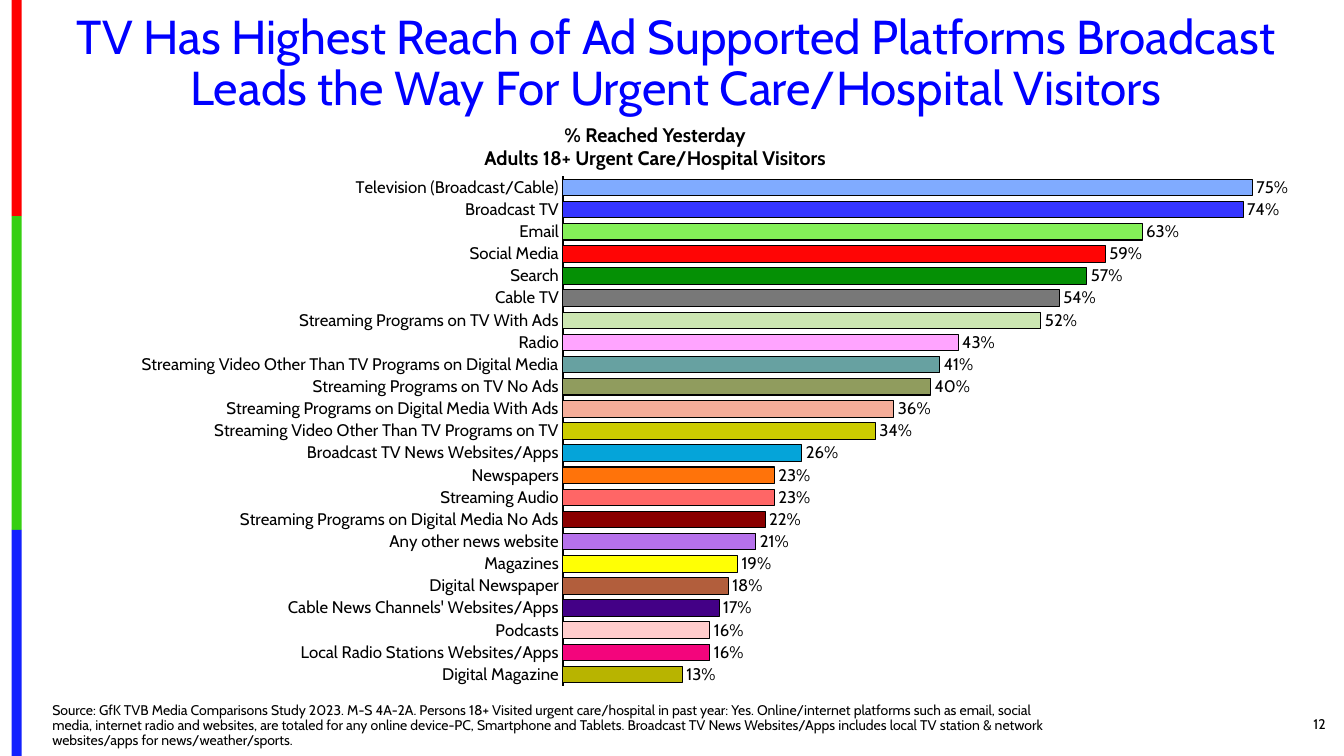
import pptx
import pptx.chart.data
import pptx.dml.color
import pptx.enum.chart
import pptx.enum.shapes
import pptx.enum.text
import pptx.oxml
import pptx.oxml.ns
import pptx.util

Pt = pptx.util.Pt
ALIGN = pptx.enum.text.PP_ALIGN
ANCHOR = pptx.enum.text.MSO_ANCHOR
FONT = "Cabin"
TITLE = ("TV Has Highest Reach of Ad Supported Platforms Broadcast "
         "Leads the Way For Urgent Care/Hospital Visitors")
HEADING = ["% Reached Yesterday", "Adults 18+ Urgent Care/Hospital Visitors"]
SOURCE = (
    "Source: GfK TVB Media Comparisons Study 2023. M-S 4A-2A. Persons 18+ Visited urgent "
    "care/hospital in past year: Yes. Online/internet platforms such as email, social media, "
    "internet radio and websites, are totaled for any online device-PC, Smartphone and Tablets. "
    "Broadcast TV News Websites/Apps includes local TV station & network websites/apps for "
    "news/weather/sports.")
STRIPES = [("FE0000", 154.5), ("36CF12", 224), ("1322FE", 161.5)]
PLATFORMS = [
    ("Television (Broadcast/Cable)", 0.75, "80ABFF"),
    ("Broadcast TV", 0.74, "3636FF"),
    ("Email", 0.63, "84F058"),
    ("Social Media", 0.59, "FF0505"),
    ("Search", 0.57, "059005"),
    ("Cable TV", 0.54, "787878"),
    ("Streaming Programs on TV With Ads", 0.52, "CCE6B2"),
    ("Radio", 0.43, "FFA4FF"),
    ("Streaming Video Other Than TV Programs on Digital Media", 0.41, "67A1A1"),
    ("Streaming Programs on TV No Ads", 0.40, "909C5E"),
    ("Streaming Programs on Digital Media With Ads", 0.36, "F5AD99"),
    ("Streaming Video Other Than TV Programs on TV", 0.34, "CCCC00"),
    ("Broadcast TV News Websites/Apps", 0.26, "05A4D9"),
    ("Newspapers", 0.23, "FF730A"),
    ("Streaming Audio", 0.23, "FF6666"),
    ("Streaming Programs on Digital Media No Ads", 0.22, "8A0000"),
    ("Any other news website", 0.21, "B671EB"),
    ("Magazines", 0.19, "FFFF05"),
    ("Digital Newspaper", 0.18, "B25E3C"),
    ("Cable News Channels' Websites/Apps", 0.17, "430086"),
    ("Podcasts", 0.16, "FFCCCC"),
    ("Local Radio Stations Websites/Apps", 0.16, "F3057C"),
    ("Digital Magazine", 0.13, "B8B400"),
]


def rgb(value):
    return pptx.dml.color.RGBColor.from_string(value)


def set_font(font, size, color="000000", bold=False):
    font.name, font.size, font.bold = FONT, Pt(size), bold
    font.color.rgb = rgb(color)


def place(sp, box):
    sp.left, sp.top, sp.width, sp.height = [Pt(v) for v in box]


def write(sp, lines, size, align, anchor, color="000000", bold=False, spacing=1.0, grow=True):
    tf = sp.text_frame
    sizing = pptx.enum.text.MSO_AUTO_SIZE
    tf.word_wrap = True
    tf.auto_size = sizing.SHAPE_TO_FIT_TEXT if grow else sizing.NONE
    tf.vertical_anchor = anchor
    for i, line in enumerate(lines):
        p = tf.paragraphs[0] if i == 0 else tf.add_paragraph()
        p.alignment, p.line_spacing, p.space_before = align, spacing, Pt(0)
        r = p.add_run()
        r.text = line
        set_font(r.font, size, color, bold)


# Colour band down the left edge
def add_stripes(slide, box):
    left, top, width, _ = box
    for color, height in STRIPES:
        sp = slide.shapes.add_shape(pptx.enum.shapes.MSO_SHAPE.RECTANGLE,
                                    Pt(left), Pt(top), Pt(width), Pt(height))
        sp.shadow.inherit = False
        sp.fill.solid()
        sp.fill.fore_color.rgb = rgb(color)
        sp.line.fill.background()
        top += height


def add_title(slide, box):
    sp = slide.shapes.title
    place(sp, box)
    write(sp, [TITLE], 34, ALIGN.CENTER, ANCHOR.TOP, "0000FF", spacing=0.9)


# Source note in the body placeholder, without its bullet
def add_source(slide, box):
    sp = slide.placeholders[1]
    place(sp, box)
    pPr = sp.text_frame.paragraphs[0]._p.get_or_add_pPr()
    pPr.set("marL", "0")
    pPr.set("indent", "0")
    pPr.append(pptx.oxml.parse_xml("<a:buNone %s/>" % pptx.oxml.ns.nsdecls("a")))
    write(sp, [SOURCE], 10, ALIGN.LEFT, ANCHOR.BOTTOM, spacing=0.9)


def add_heading(slide, box):
    sp = slide.shapes.add_textbox(*[Pt(v) for v in box])
    write(sp, HEADING, 14, ALIGN.CENTER, ANCHOR.TOP, bold=True)


def add_page_number(slide, box):
    sp = slide.shapes.add_textbox(*[Pt(v) for v in box])
    write(sp, ["12"], 10, ALIGN.RIGHT, ANCHOR.MIDDLE, grow=False)


# Fix the inner plot area as fractions of the chart
def set_plot_area(chart, x, y, w, h):
    plot_area = chart._chartSpace.chart.plotArea
    for old in plot_area.findall(pptx.oxml.ns.qn("c:layout")):
        plot_area.remove(old)
    plot_area.insert(0, pptx.oxml.parse_xml(
        '<c:layout %s><c:manualLayout><c:layoutTarget val="inner"/>'
        '<c:xMode val="edge"/><c:yMode val="edge"/><c:x val="%s"/><c:y val="%s"/>'
        '<c:w val="%s"/><c:h val="%s"/></c:manualLayout></c:layout>'
        % (pptx.oxml.ns.nsdecls("c"), x, y, w, h)))


def add_reach_chart(slide, box):
    enums = pptx.enum.chart
    names, values, colors = zip(*PLATFORMS)
    data = pptx.chart.data.CategoryChartData(number_format="0%")
    data.categories = names
    data.add_series("Reached yesterday", values)
    chart = slide.shapes.add_chart(enums.XL_CHART_TYPE.BAR_CLUSTERED,
                                   *[Pt(v) for v in box], data).chart
    chart.has_title = chart.has_legend = False
    set_font(chart.font, 10)
    set_plot_area(chart, 0.413, 0.047, 0.565, 0.946)

    # Axes
    axis = chart.category_axis
    axis.reverse_order = True
    axis.major_tick_mark = axis.minor_tick_mark = enums.XL_TICK_MARK.NONE
    axis.format.line.color.rgb = rgb("000000")
    axis.format.line.width = Pt(1.5)
    set_font(axis.tick_labels.font, 12)
    scale = chart.value_axis
    scale.minimum_scale, scale.maximum_scale = 0, 0.8
    scale.has_major_gridlines = scale.visible = False

    # Bars and their labels
    plot = chart.plots[0]
    plot.gap_width, plot.vary_by_categories = 34, False
    plot.has_data_labels = True
    labels = plot.data_labels
    labels.show_value = True
    labels.number_format, labels.number_format_is_linked = "0%", False
    labels.position = enums.XL_LABEL_POSITION.OUTSIDE_END
    set_font(labels.font, 12)
    for i, color in enumerate(colors):
        bar = plot.series[0].points[i].format
        bar.fill.solid()
        bar.fill.fore_color.rgb = rgb(color)
        bar.line.color.rgb = rgb("000000")
        bar.line.width = Pt(0.75)


def main():
    prs = pptx.Presentation()
    prs.slide_width, prs.slide_height = Pt(960), Pt(540)
    slide = prs.slides.add_slide(prs.slide_layouts[1])
    add_stripes(slide, (8.3, 0, 7.2, 540))
    add_title(slide, (36, 5.8, 894, 81.4))
    add_page_number(slide, (876, 502.6, 78, 28.8))
    add_source(slide, (30.2, 498.2, 732, 40.3))
    add_heading(slide, (228, 84.2, 480, 41))
    add_reach_chart(slide, (18, 108, 930, 384.5))
    prs.save("out.pptx")


if __name__ == "__main__":
    main()
